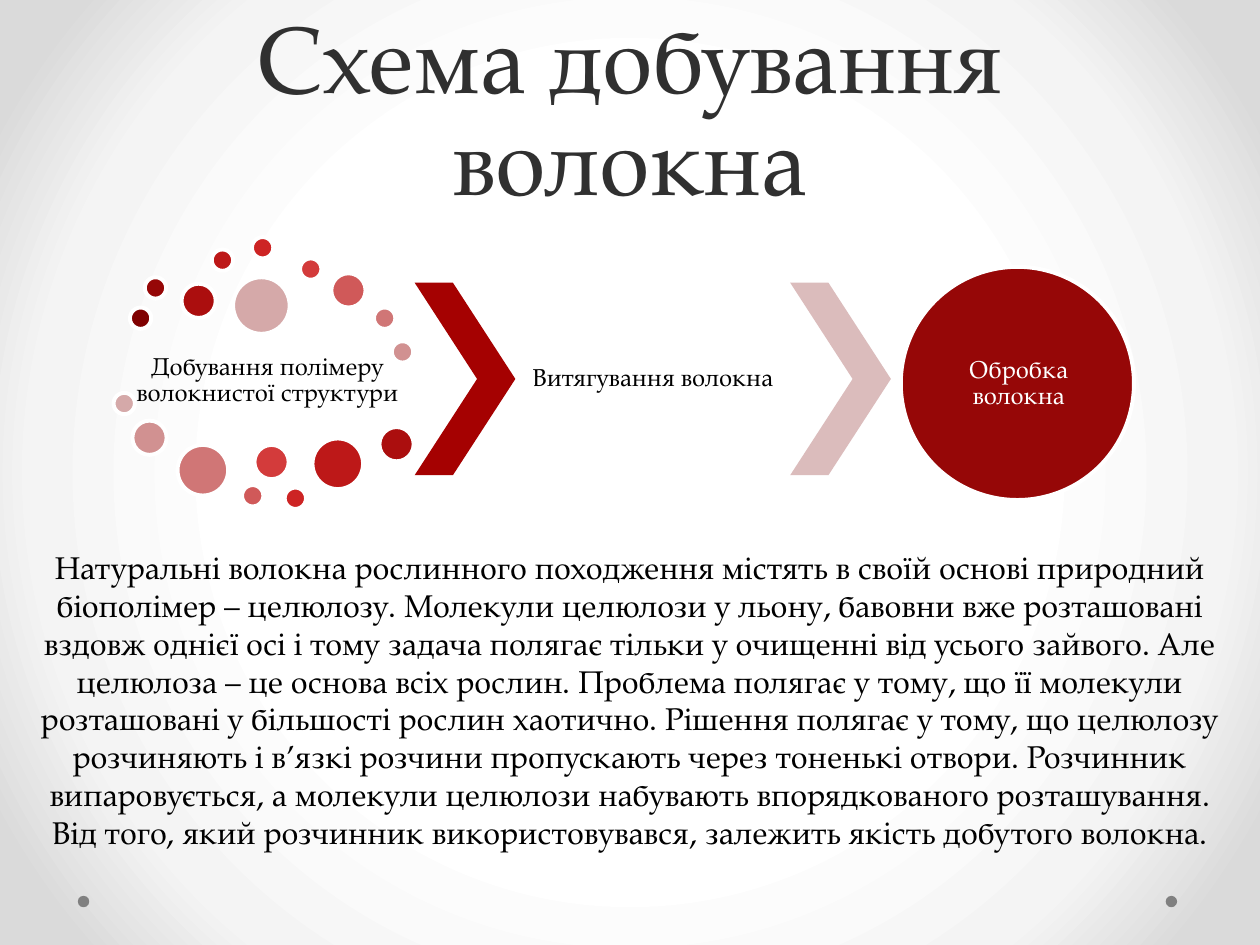
import pptx
import pptx.util
import pptx.dml.color
import pptx.enum.shapes
import pptx.enum.text
import lxml.etree

Cm = pptx.util.Cm
Pt = pptx.util.Pt
RGB = pptx.dml.color.RGBColor.from_string
KIND = pptx.enum.shapes.MSO_SHAPE
ANCHOR = pptx.enum.text.MSO_ANCHOR

FONT = "TeX Gyre Pagella"
HUES = {
    "title": "303030", "text": "000000", "white": "FFFFFF", "grey": "808080",
    "arrow": "A50101", "pale": "DBBCBC", "disc": "960707",
    "mid": "F4F4F4", "edge": "DADADA",
}
REDS = ["800101", "960707", "AB0E0E", "BD1818", "CD2424",
        "D33B3B", "D05959", "D07676", "D19191", "D5A9A9"]

deck = pptx.Presentation()
deck.slide_width = Cm(25.4)
deck.slide_height = Cm(19.05)
slide = deck.slides.add_slide(deck.slide_layouts[6])


def add_text(text, box, size=14, hue="text", anchor=ANCHOR.MIDDLE, line=0.9, side=0.05, edge=0.05):
    frame = slide.shapes.add_textbox(*map(Cm, box)).text_frame
    frame.word_wrap = True
    frame.vertical_anchor = anchor
    frame.margin_left = frame.margin_right = Cm(side)
    frame.margin_top = frame.margin_bottom = Cm(edge)
    frame.text = text
    for para in frame.paragraphs:
        para.alignment = pptx.enum.text.PP_ALIGN.CENTER
        para.line_spacing = line
        para.font.name = FONT
        para.font.size = Pt(size)
        para.font.color.rgb = RGB(HUES[hue])


def add_form(kind, box, fill, rim=True):
    form = slide.shapes.add_shape(kind, *map(Cm, box))
    form.shadow.inherit = False
    form.fill.solid()
    form.fill.fore_color.rgb = RGB(fill)
    if rim:
        form.line.color.rgb = RGB(HUES["white"])
        form.line.width = Pt(2.25)
    else:
        form.line.fill.background()
    return form


back = slide.background.fill
back.gradient()
grad = slide.background._cSld.bg.bgPr[0]
for child in list(grad):
    grad.remove(child)
space = "{http://schemas.openxmlformats.org/drawingml/2006/main}"
stops = lxml.etree.SubElement(grad, space + "gsLst")
for place, hue in [(50, "white"), (76, "mid"), (92, "edge")]:
    stop = lxml.etree.SubElement(stops, space + "gs", pos=str(place * 1000))
    lxml.etree.SubElement(stop, space + "srgbClr", val=HUES[hue])
round_path = lxml.etree.SubElement(grad, space + "path", path="circle")
lxml.etree.SubElement(round_path, space + "fillToRect", l="50000", t="50000", r="50000", b="50000")

for left in (23.5, 1.57):
    add_form(KIND.OVAL, (left, 18.06, 0.23, 0.23), HUES["grey"], rim=False)

add_text("Схема добування волокна", (1.27, 0, 22.86, 4.45), size=54, hue="title",
         anchor=ANCHOR.BOTTOM, line=Pt(58), side=0.25, edge=0.13)

add_text("Добування полімеру волокнистої структури", (2.62, 6.76, 5.54, 1.83))
dots = [
    (2.62, 6.2, 0.43), (2.92, 5.59, 0.43), (3.66, 5.72, 0.69),
    (4.27, 5.03, 0.43), (5.08, 4.78, 0.43), (6.05, 5.21, 0.43),
    (6.68, 5.51, 0.69), (7.54, 6.2, 0.43), (7.9, 6.88, 0.43),
    (4.7, 5.59, 1.14), (2.29, 7.92, 0.43), (2.67, 8.48, 0.69),
    (3.58, 8.97, 1.02), (4.88, 9.78, 0.43), (5.13, 8.97, 0.69),
    (5.74, 9.83, 0.43), (6.3, 8.84, 1.02), (7.65, 8.61, 0.69),
]
for (left, top, size), red in zip(dots, REDS + REDS[::-1]):
    add_form(KIND.OVAL, (left, top, size, size), red)

for left, hue in [(8.36, "arrow"), (15.93, "pale")]:
    arrow = add_form(KIND.CHEVRON, (left, 5.7, 2.03, 3.88), HUES[hue], rim=False)
    arrow.adjustments[0] = 0.62
add_text("Витягування волокна", (10.39, 5.7, 5.54, 3.88))

add_form(KIND.OVAL, (18.16, 5.38, 4.7, 4.7), HUES["disc"])
add_text("Обробка волокна", (18.87, 6.07, 3.33, 3.33), hue="white", side=0, edge=0)

body = (
    "Натуральні волокна рослинного походження містять в своїй основі природний "
    "біополімер – целюлозу. Молекули целюлози у льону, бавовни вже розташовані "
    "вздовж однієї осі і тому задача полягає тільки у очищенні від усього зайвого. "
    "Але целюлоза – це основа всіх рослин. Проблема полягає у тому, що її молекули "
    "розташовані у більшості рослин хаотично. Рішення полягає у тому, що целюлозу "
    "розчиняють і в’язкі розчини пропускають через тоненькі отвори. Розчинник "
    "випаровується, а молекули целюлози набувають впорядкованого розташування.\n"
    "Від того, який розчинник використовувався, залежить якість добутого волокна."
)
add_text(body, (0, 10.92, 25.4, 7.19), size=18, anchor=ANCHOR.TOP, line=1.0, side=0.25, edge=0.13)

deck.save("out.pptx")
